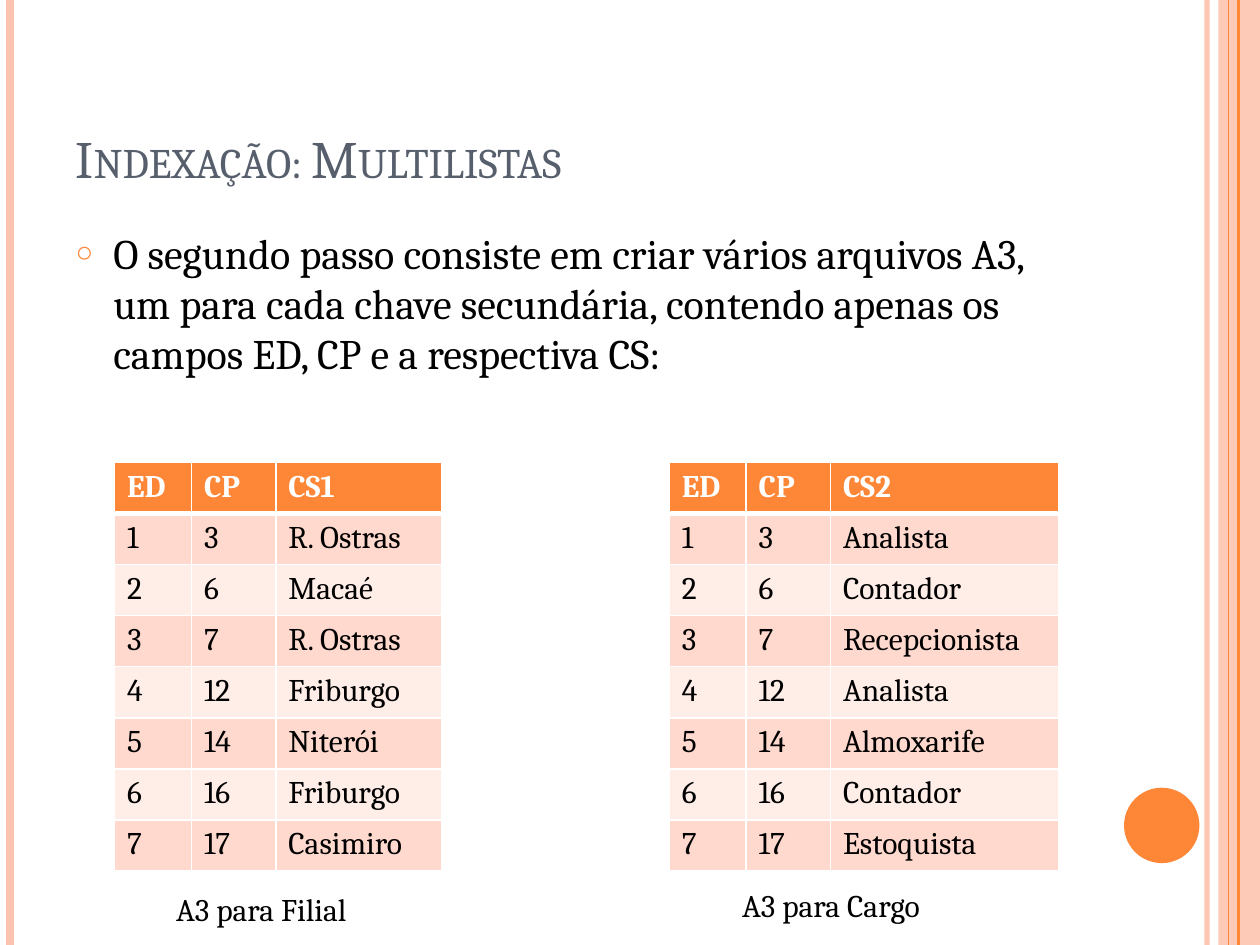
"""Build the slide on multilist indexing with its two secondary-key tables."""
from lxml import etree
from pptx import Presentation
from pptx import util as u
from pptx.dml.color import RGBColor
from pptx.enum import shapes, text
from pptx.oxml import ns

ORANGE, PEACH, WHITE, BLACK = "FE8637", "FEC3AE", "FFFFFF", "000000"
BANDS = ["FFEDE8", "FFD9CE"]


def paint(color_format, color, opacity=100):
    color_format.rgb = RGBColor.from_string(color)
    if opacity < 100:
        for element in color_format._xFill.iter(ns.qn("a:srgbClr")):
            etree.SubElement(element, ns.qn("a:alpha"), val=str(opacity * 1000))


def write(frame, content, size=18, color=BLACK, bold=False, small_caps=False):
    paragraph = frame.paragraphs[0]
    paragraph.alignment = text.PP_ALIGN.LEFT
    run = paragraph.add_run()
    run.text = content
    run.font.name = "Cambria"
    run.font.size = u.Pt(size)
    run.font.bold = bold
    paint(run.font.color, color)
    if small_caps:
        run._r.get_or_add_rPr().set("cap", "small")
    return paragraph


presentation = Presentation()
presentation.slide_width, presentation.slide_height = u.Cm(25.4), u.Cm(19.05)
slide = presentation.slides.add_slide(presentation.slide_layouts[1])

decorations = [
    (shapes.MSO_SHAPE.RECTANGLE, 24.56, 0, 0.84, 19.05, PEACH, 87),
    (shapes.MSO_SHAPE.OVAL, 22.66, 15.88, 1.52, 1.52, ORANGE, 100),
]
for kind, left, top, width, height, color, opacity in decorations:
    shape = slide.shapes.add_shape(kind, u.Cm(left), u.Cm(top), u.Cm(width), u.Cm(height))
    shape.shadow.inherit = False
    shape.fill.solid()
    paint(shape.fill.fore_color, color, opacity)
    shape.line.fill.background()

stripes = [
    (24.33, PEACH, 3, 93),
    (0.2, PEACH, 4.5, 100),
    (24.97, ORANGE, 1.5, 100),
    (24.77, ORANGE, 0.75, 100),
]
for left, color, weight, opacity in stripes:
    stripe = slide.shapes.add_connector(
        shapes.MSO_CONNECTOR.STRAIGHT, u.Cm(left), u.Cm(0), u.Cm(left), u.Cm(19.05))
    stripe.line.width = u.Pt(weight)
    stripe.line.fill.solid()
    paint(stripe.line.fill.fore_color, color, opacity)
    etree.SubElement(stripe._element.spPr, ns.qn("a:effectLst"))

title, body = slide.shapes.title, slide.placeholders[1]
for placeholder, top, height in [(title, 0.76, 3.18), (body, 4.45, 13.54)]:
    placeholder.left, placeholder.top = u.Cm(1.27), u.Cm(top)
    placeholder.width, placeholder.height = u.Cm(20.75), u.Cm(height)
    placeholder.text_frame.auto_size = text.MSO_AUTO_SIZE.NONE
    placeholder.text_frame.word_wrap = True
title.text_frame.vertical_anchor = text.MSO_ANCHOR.BOTTOM
body.text_frame.vertical_anchor = text.MSO_ANCHOR.TOP
write(title.text_frame, "Indexação: Multilistas", size=30, color="575F6D", small_caps=True)
paragraph = write(
    body.text_frame,
    "O segundo passo consiste em criar vários arquivos A3, um para cada chave secundária, "
    "contendo apenas os campos ED, CP e a respectiva CS:",
    size=24)
paragraph.space_before = u.Pt(6)
properties = paragraph._p.get_or_add_pPr()
properties.set("marL", str(u.Cm(0.76)))
properties.set("indent", str(u.Cm(-0.76)))
bullet_color = etree.SubElement(properties, ns.qn("a:buClr"))
etree.SubElement(bullet_color, ns.qn("a:srgbClr"), val=ORANGE)
etree.SubElement(properties, ns.qn("a:buSzPct"), val="70000")
etree.SubElement(properties, ns.qn("a:buChar"), char="○")

primary_keys = [3, 6, 7, 12, 14, 16, 17]
branches = ["R. Ostras", "Macaé", "R. Ostras", "Friburgo", "Niterói", "Friburgo", "Casimiro"]
positions = ["Analista", "Contador", "Recepcionista", "Analista", "Almoxarife", "Contador",
             "Estoquista"]
tables = [(2.31, 3.35, "CS1", branches), (13.49, 4.6, "CS2", positions)]
for left, key_width, key_name, keys in tables:
    rows = [("ED", "CP", key_name)]
    rows += [(index, *pair) for index, pair in enumerate(zip(primary_keys, keys), 1)]
    widths = [1.55, 1.7, key_width]
    table = slide.shapes.add_table(
        len(rows), len(widths), u.Cm(left), u.Cm(9.32), u.Cm(sum(widths)), u.Cm(8.24)).table
    for column, width in zip(table.columns, widths):
        column.width = u.Cm(width)
    for row_index, row in enumerate(rows):
        table.rows[row_index].height = u.Cm(1.03)
        header = row_index == 0
        for column_index, value in enumerate(row):
            cell = table.cell(row_index, column_index)
            write(cell.text_frame, str(value), color=WHITE if header else BLACK, bold=header)
            for side in ["lnL", "lnR", "lnT", "lnB"]:
                thick = (side, row_index) in [("lnB", 0), ("lnT", 1)]
                border = etree.SubElement(cell._tc.get_or_add_tcPr(), ns.qn(f"a:{side}"),
                                          w=str(u.Pt(3 if thick else 1)))
                border_fill = etree.SubElement(border, ns.qn("a:solidFill"))
                etree.SubElement(border_fill, ns.qn("a:srgbClr"), val=WHITE)
            cell.fill.solid()
            paint(cell.fill.fore_color, ORANGE if header else BANDS[row_index % 2])

captions = [("A3 para Filial", 3.3, 17.81, 4.65), ("A3 para Cargo", 14.71, 17.73, 4.83)]
for content, left, top, width in captions:
    caption = slide.shapes.add_textbox(u.Cm(left), u.Cm(top), u.Cm(width), u.Cm(1.02))
    caption.text_frame.word_wrap = False
    caption.text_frame.auto_size = text.MSO_AUTO_SIZE.SHAPE_TO_FIT_TEXT
    write(caption.text_frame, content)

presentation.save("out.pptx")
